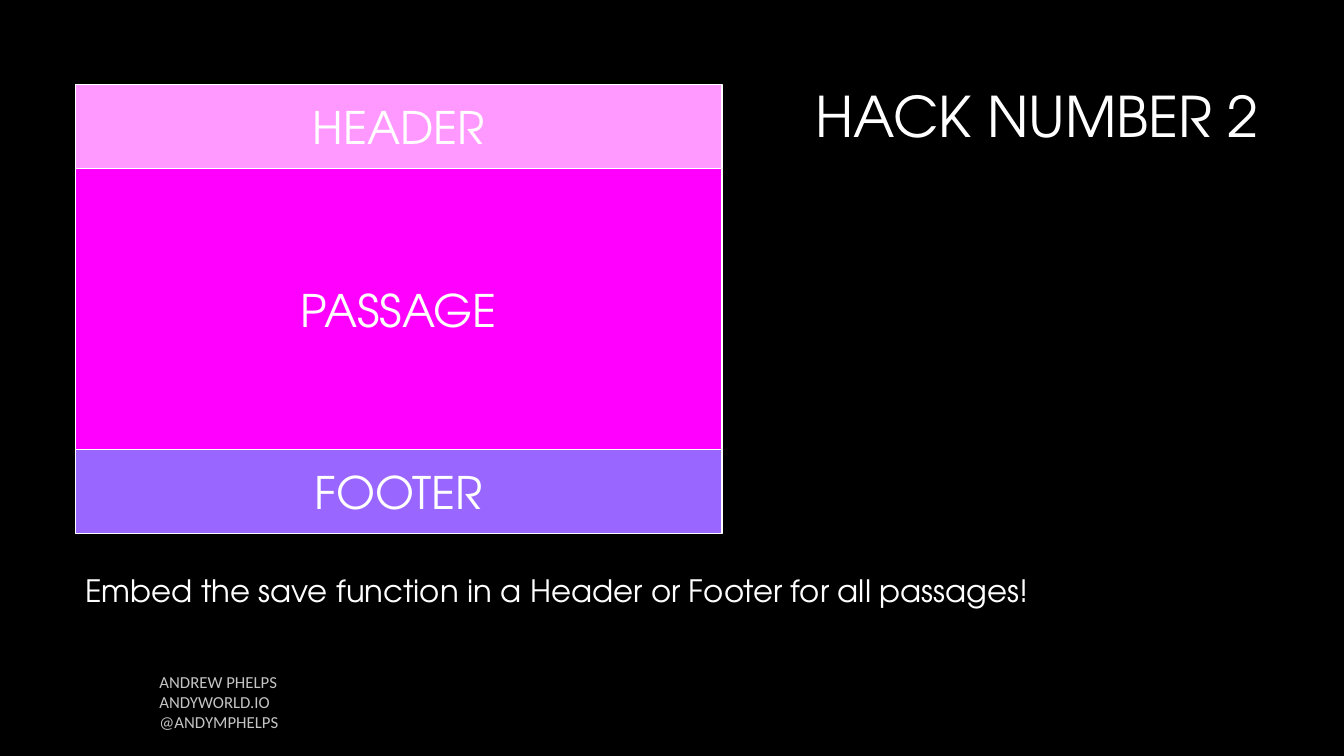
from dataclasses import dataclass

from pptx import Presentation
from pptx.dml.color import RGBColor
from pptx.enum.shapes import MSO_SHAPE
from pptx.enum.text import MSO_ANCHOR, PP_ALIGN
from pptx.util import Cm, Pt


@dataclass(frozen=True)
class Theme:
    """Colours, fonts and type sizes of the slide."""
    background: RGBColor = RGBColor(0x00, 0x00, 0x00)
    text: RGBColor = RGBColor(0xFF, 0xFF, 0xFF)
    credit: RGBColor = RGBColor(0xC4, 0xC4, 0xC4)
    header: RGBColor = RGBColor(0xFF, 0x99, 0xFF)
    passage: RGBColor = RGBColor(0xFF, 0x00, 0xFF)
    footer: RGBColor = RGBColor(0x99, 0x66, 0xFF)
    display_font: str = "TeX Gyre Adventor"
    credit_font: str = "Calibri"
    title_size: Pt = Pt(40)
    section_size: Pt = Pt(32)
    advice_size: Pt = Pt(22)
    credit_size: Pt = Pt(12)
    outline: Pt = Pt(1)


THEME = Theme()


def set_font(paragraph, size, name=THEME.display_font, color=THEME.text):
    """Style a whole paragraph."""
    paragraph.font.size = size
    paragraph.font.name = name
    paragraph.font.color.rgb = color


def add_line_of_text(slide, box, wording, size, align):
    """Place one wrapped paragraph in the box."""
    frame = slide.shapes.add_textbox(*box).text_frame
    frame.word_wrap = True
    paragraph = frame.paragraphs[0]
    paragraph.text = wording
    paragraph.alignment = align
    paragraph.line_spacing = 0.9
    set_font(paragraph, size)


def add_page_layout(slide, box):
    """Stack the header, passage and footer bands to fill the box."""
    left, top, width, height = box
    edge = Cm(2.12)
    bands = [
        ("HEADER", edge, THEME.header),
        ("PASSAGE", height - 2 * edge, THEME.passage),
        ("FOOTER", edge, THEME.footer),
    ]
    for label, band_height, color in bands:
        band = slide.shapes.add_shape(MSO_SHAPE.RECTANGLE, left, top, width, band_height)
        band.shadow.inherit = False
        band.fill.solid()
        band.fill.fore_color.rgb = color
        band.line.color.rgb = THEME.text
        band.line.width = THEME.outline
        band.text_frame.vertical_anchor = MSO_ANCHOR.MIDDLE
        paragraph = band.text_frame.paragraphs[0]
        paragraph.text = label
        paragraph.alignment = PP_ALIGN.CENTER
        set_font(paragraph, THEME.section_size)
        top += band_height


def add_credit(slide, box, lines):
    """Place the speaker's details, one paragraph a line, without insets."""
    frame = slide.shapes.add_textbox(*box).text_frame
    frame.word_wrap = True
    frame.margin_left = frame.margin_right = frame.margin_top = frame.margin_bottom = 0
    frame.text = "\n".join(lines)
    for paragraph in frame.paragraphs:
        set_font(paragraph, THEME.credit_size, THEME.credit_font, THEME.credit)


def build_hack_slide(presentation):
    """Add the slide on embedding the save function."""
    slide = presentation.slides.add_slide(presentation.slide_layouts[6])
    slide.background.fill.solid()
    slide.background.fill.fore_color.rgb = THEME.background
    margin, top = Cm(1.9), Cm(2.13)
    add_credit(slide, (Cm(4.02), Cm(16.93), Cm(18.42), Cm(1.27)),
               ["ANDREW PHELPS", "ANDYWORLD.IO", "@ANDYMPHELPS"])
    add_line_of_text(slide, (Cm(8.05), top, Cm(23.93), Cm(3.58)),
                     "HACK NUMBER 2", THEME.title_size, PP_ALIGN.RIGHT)
    add_line_of_text(slide, (margin, Cm(14.4), Cm(29.64), Cm(1.83)),
                     "Embed the save function in a Header or Footer for all passages!",
                     THEME.advice_size, PP_ALIGN.LEFT)
    add_page_layout(slide, (margin, top, Cm(16.3), Cm(11.32)))


def main():
    """Build and save the presentation."""
    presentation = Presentation()
    presentation.slide_width = Cm(33.87)
    presentation.slide_height = Cm(19.05)
    build_hack_slide(presentation)
    presentation.save("out.pptx")


if __name__ == "__main__":
    main()
